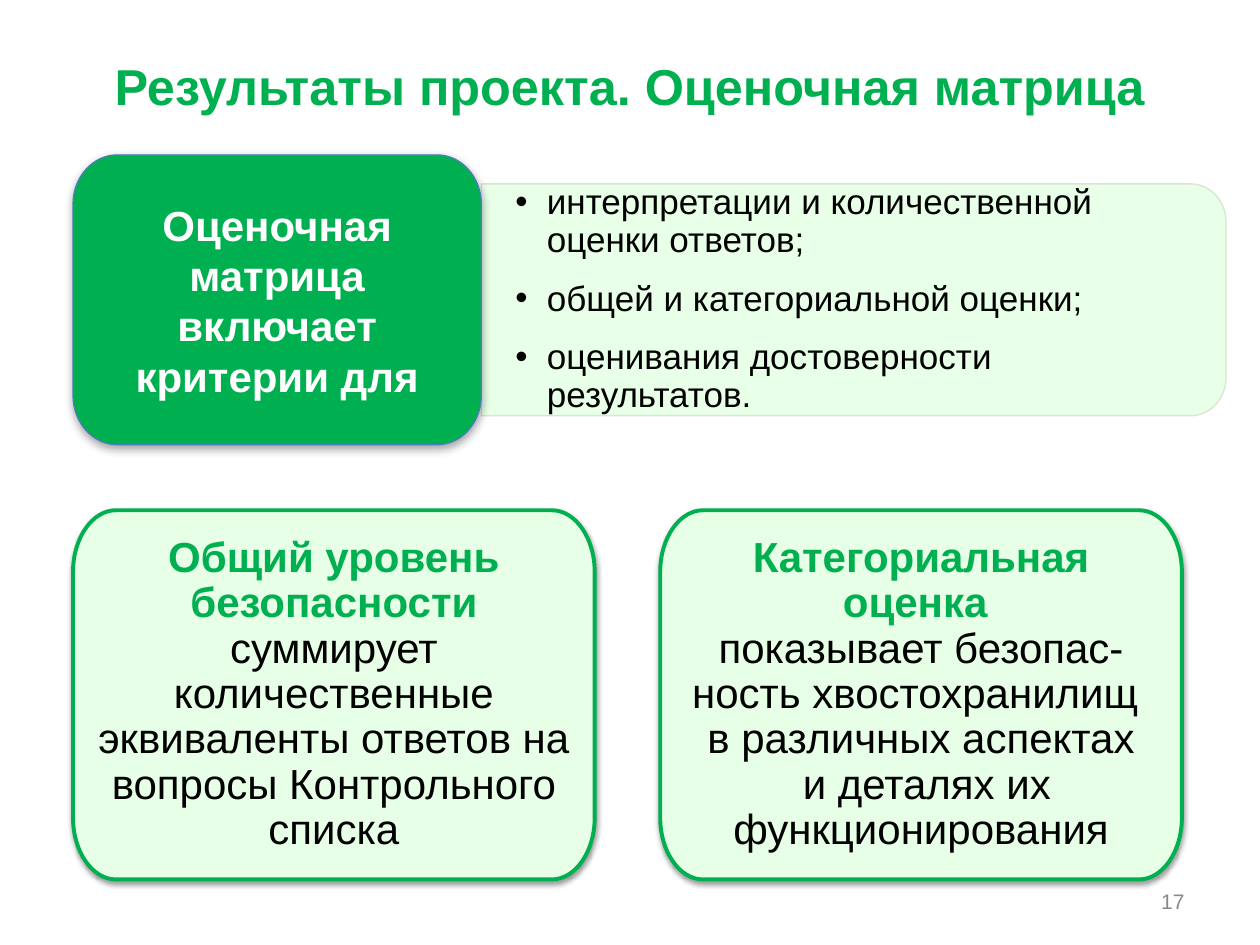
from lxml.etree import SubElement
from pptx import Presentation
from pptx.dml.color import RGBColor
from pptx.enum.text import MSO_ANCHOR, PP_ALIGN
from pptx.oxml.ns import qn
from pptx.util import Inches, Pt

GREEN = RGBColor(0x00, 0xB0, 0x50)
MINT = RGBColor(0xE6, 0xFF, 0xE6)
SAGE = RGBColor(0xD9, 0xE2, 0xCC)
BLUE = RGBColor(0x4A, 0x7E, 0xBB)
GREY = RGBColor(0x89, 0x89, 0x89)
BLACK = RGBColor(0, 0, 0)
WHITE = RGBColor(0xFF, 0xFF, 0xFF)
BEND = 0.55  # how far curve handles reach toward a corner


def write(para, text, size, color, bold=False):
    """Add one run; a newline becomes a line break."""
    for i, line in enumerate(text.split("\n")):
        if i:
            para.add_line_break()
        run = para.add_run()
        run.text = line
        font = run.font
        font.name, font.size, font.bold = "Arial", Pt(size), bold
        font.color.rgb = color


def set_frame(shape, side=0.1, top=0.05, right=None):
    frame = shape.text_frame
    frame.word_wrap = True
    frame.vertical_anchor = MSO_ANCHOR.MIDDLE
    frame.margin_left = Inches(side)
    frame.margin_right = Inches(side if right is None else right)
    frame.margin_top = frame.margin_bottom = Inches(top)
    return frame


def add_label(slide, box, text, size, color, align, bold=False):
    label = slide.shapes.add_textbox(*map(Inches, box))
    para = set_frame(label).paragraphs[0]
    para.alignment = align
    write(para, text, size, color, bold)


def add_panel(slide, box, radii, fill, edge, width, square_left=False):
    """Panel with elliptical corners, clockwise from top left."""
    x, y, w, h = box
    rx, ry = radii
    points, curves = [], []
    for right, low in [(0, 0), (1, 0), (1, 1), (0, 1)]:
        cx, cy = x + right * w, y + low * h
        if square_left and not right:
            points.append((cx, cy))
            continue
        dx, dy = (-rx if right else rx), (-ry if low else ry)
        ends = [(0, dy), (0, dy * (1 - BEND)), (dx * (1 - BEND), 0), (dx, 0)]
        if right != low:
            ends.reverse()
        curves.append(len(points))
        points += [(cx + a, cy + b) for a, b in ends]
    points = [(Inches(a), Inches(b)) for a, b in points]
    path = slide.shapes.build_freeform(*points[0])
    path.add_line_segments(points[1:], close=True)
    panel = path.convert_to_shape()

    # Turn the three steps after each corner start into one curve
    steps = list(next(panel._element.spPr.iter(qn("a:path"))))
    for start in curves:
        first, *rest = steps[start + 1:start + 4]
        first.tag = qn("a:cubicBezTo")
        for step in rest:
            first.append(step[0])
            step.getparent().remove(step)

    panel.fill.solid()
    panel.fill.fore_color.rgb = fill
    panel.line.color.rgb = edge
    panel.line.width = Pt(width)
    panel.shadow.inherit = False
    return panel


def add_alpha(color, percent):
    SubElement(color, qn("a:alpha"), val=str(percent * 1000))


def add_shadow(shape, alpha, blur, dist):
    effects = shape._element.spPr.find(qn("a:effectLst"))
    outer = SubElement(effects, qn("a:outerShdw"), blurRad=str(Pt(blur)),
                       dist=str(Pt(dist)), dir="5400000", rotWithShape="0")
    add_alpha(SubElement(outer, qn("a:srgbClr"), val="000000"), alpha)


def add_bullet(para):
    props = para._p.get_or_add_pPr()
    props.set("marL", str(Inches(0.25)))
    props.set("indent", str(Inches(-0.25)))
    SubElement(props, qn("a:buFont"), typeface="Arial")
    SubElement(props, qn("a:buChar"), char="•")


def add_matrix(slide, box, head, items):
    """Green heading block with a list panel to its right."""
    x, y, w, h = box
    split = 3.24
    # List panel
    panel = add_panel(slide, (x + split, y + 0.23, w - split, h - 0.46),
                      (0.28, 0.3), MINT, SAGE, 0.75, square_left=True)
    for color in panel._element.spPr.iter(qn("a:srgbClr")):
        add_alpha(color, 90)
    frame = set_frame(panel, 0.27, 0.22, 0.35)
    for i, item in enumerate(items):
        para = frame.add_paragraph() if i else frame.paragraphs[0]
        add_bullet(para)
        para.alignment = PP_ALIGN.LEFT
        para.line_spacing = 0.9
        para.space_after = Pt(12)
        write(para, item, 20, BLACK)
    # Heading block
    block = add_panel(slide, (x, y, split, h), (0.35, 0.39), GREEN, BLUE, 0.75)
    add_shadow(block, 35, 5, 1.8)
    para = set_frame(block).paragraphs[0]
    para.alignment = PP_ALIGN.CENTER
    write(para, head, 24, WHITE, True)


def add_card(slide, box, head, body, inset, split):
    """Outlined card; split puts the body in its own paragraph."""
    card = add_panel(slide, box, (0.34, 0.49), MINT, GREEN, 2.25)
    add_shadow(card, 38, 3.1, 1.6)
    frame = set_frame(card, *inset)
    para = frame.paragraphs[0]
    write(para, head, 24, GREEN, True)
    if split:
        para = frame.add_paragraph()
    write(para, body, 24, BLACK)
    for para in frame.paragraphs:
        para.alignment = PP_ALIGN.CENTER
        para.line_spacing = 0.9


def main():
    deck = Presentation()
    deck.slide_width, deck.slide_height = Inches(10), Inches(7.5)
    slide = deck.slides.add_slide(deck.slide_layouts[6])

    # Title and page number
    add_label(slide, (0.5, 0.28, 9, 0.79), "Результаты проекта. Оценочная матрица",
              28.8, GREEN, PP_ALIGN.CENTER, True)
    add_label(slide, (7.17, 6.95, 2.33, 0.4), "17", 12, GREY, PP_ALIGN.RIGHT)

    # Criteria
    add_matrix(slide, (0.58, 1.23, 9.15, 2.3),
               "Оценочная матрица включает критерии для",
               ["интерпретации и количественной оценки ответов;",
                "общей и категориальной оценки;",
                "оценивания достоверности результатов."])

    # Two kinds of rating
    cards = [
        ("Общий уровень безопасности ",
         "суммирует количественные эквиваленты ответов на вопросы "
         "Контрольного списка", (0.17, 0.13), False),
        ("Категориальная оценка ",
         "показывает безопас-ность хвостохранилищ \nв различных аспектах\n"
         " и деталях их функционирования", (0.14, 0.11), True),
    ]
    for i, card in enumerate(cards):
        add_card(slide, (0.58 + i * 4.66, 4.05, 4.14, 2.93), *card)

    deck.save("out.pptx")


if __name__ == "__main__":
    main()
